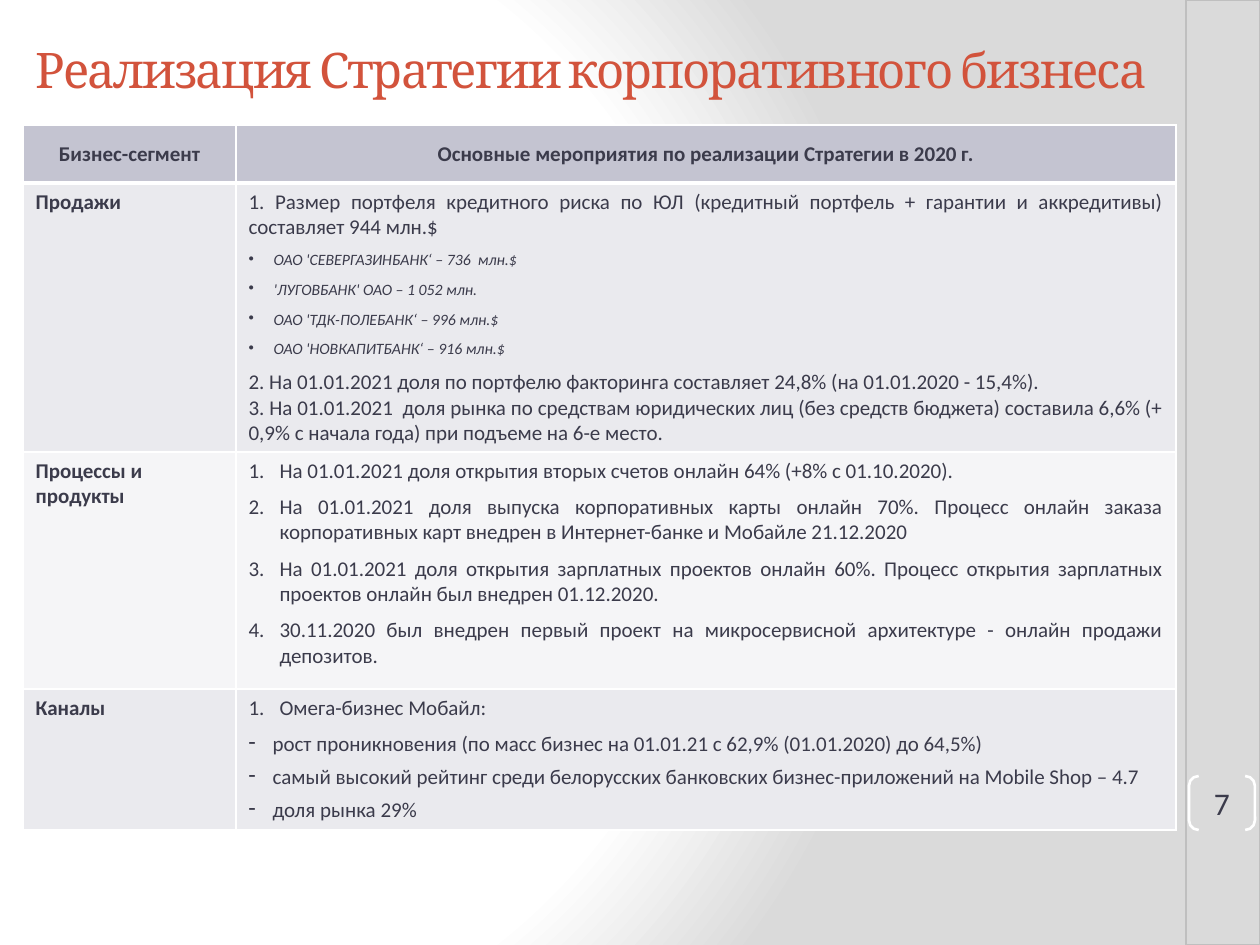
"""Build the slide on the corporate business strategy with its table of measures."""
from lxml import etree
from pptx import Presentation
from pptx.dml.color import RGBColor
from pptx.enum.shapes import MSO_SHAPE
from pptx.enum.text import MSO_ANCHOR, PP_ALIGN
from pptx.oxml import parse_xml
from pptx.oxml.ns import nsdecls, qn
from pptx.util import Pt

SCALE = 914400 / 126
WHITE = RGBColor(0xFF, 0xFF, 0xFF)
INK = RGBColor(0x3B, 0x3B, 0x4B)
RED = RGBColor(0xD2, 0x53, 0x3C)
GREY = RGBColor(0xBF, 0xBF, 0xBF)
HEADER = RGBColor(0xC4, 0xC4, 0xD1)
BAND_DARK = RGBColor(0xEA, 0xEA, 0xEE)
BAND_LIGHT = RGBColor(0xF5, 0xF5, 0xF7)

PLAIN = {}
BANK = {"bullet": ("buChar", "char", "•"), "indent": 25, "before": 6, "size": 9, "italic": True}
NUMBER = {"bullet": ("buAutoNum", "type", "arabicPeriod"), "indent": 31, "before": 6}
DASH = {"bullet": ("buChar", "char", "-"), "indent": 24, "before": 6}
TIGHT = {**DASH, "line": 13}

SEGMENTS = [
    ("Продажи", BAND_DARK, [
        ("1. Размер портфеля кредитного риска по ЮЛ (кредитный портфель + гарантии и аккредитивы) составляет 944 млн.$", PLAIN),
        ("ОАО 'СЕВЕРГАЗИНБАНК‘ – 736  млн.$", BANK),
        ("'ЛУГОВБАНК' ОАО – 1 052 млн.", BANK),
        ("ОАО 'ТДК-ПОЛЕБАНК‘ – 996 млн.$", BANK),
        ("ОАО 'НОВКАПИТБАНК‘ – 916 млн.$", {**BANK, "after": 6}),
        ("2. На 01.01.2021 доля по портфелю факторинга составляет 24,8% (на 01.01.2020 - 15,4%).", PLAIN),
        ("3. На 01.01.2021  доля рынка по средствам юридических лиц (без средств бюджета) составила 6,6% (+ 0,9% с начала года) при подъеме на 6-е место.", PLAIN),
    ]),
    ("Процессы и продукты", BAND_LIGHT, [
        ("На 01.01.2021 доля открытия вторых счетов онлайн 64% (+8% с 01.10.2020).", NUMBER),
        ("На 01.01.2021 доля выпуска корпоративных карты онлайн 70%. Процесс онлайн заказа корпоративных карт внедрен в Интернет-банке и Мобайле 21.12.2020", NUMBER),
        ("На 01.01.2021 доля открытия зарплатных проектов онлайн 60%. Процесс открытия зарплатных проектов онлайн был внедрен 01.12.2020.", NUMBER),
        ("30.11.2020 был внедрен первый проект на микросервисной архитектуре - онлайн продажи депозитов.", NUMBER),
    ]),
    ("Каналы", BAND_DARK, [
        ("Омега-бизнес Мобайл:", NUMBER),
        ("рост проникновения (по масс бизнес на 01.01.21 с 62,9% (01.01.2020) до 64,5%)", DASH),
        ("самый высокий рейтинг среди белорусских банковских бизнес-приложений на Mobile Shop – 4.7", TIGHT),
        ("доля рынка 29%", TIGHT),
    ]),
]


def px(*lengths):
    return [round(length * SCALE) for length in lengths]


def write(para, text, align, size=12, bold=False, italic=False, color=INK, name="Calibri",
          bullet=None, indent=0, before=0, after=0, line=None):
    para.text = text
    para.alignment = align
    para.space_before, para.space_after = Pt(before), Pt(after)
    if line:
        para.line_spacing = Pt(line)
    if bullet:
        kind, key, value = bullet
        props = para._p.get_or_add_pPr()
        hang, = px(indent)
        props.set("marL", str(hang))
        props.set("indent", str(-hang))
        etree.SubElement(props, qn(f"a:{kind}")).set(key, value)
    font = para.font
    font.name, font.size, font.bold, font.italic = name, Pt(size), bold, italic
    font.color.rgb = color


deck = Presentation()
deck.slide_width, deck.slide_height = px(1260, 945)
page = deck.slides.add_slide(deck.slide_layouts[6])
stops = "".join(f'<a:gs pos="{place * 1000}"><a:srgbClr val="{color}"/></a:gs>'
                for place, color in [(0, "FFFFFF"), (75, "FFFFFF"), (100, "DADADA")])
page._element.cSld.insert(0, parse_xml(
    f'<p:bg {nsdecls("p", "a")}><p:bgPr><a:gradFill rotWithShape="1"><a:gsLst>{stops}</a:gsLst>'
    '<a:path path="circle"><a:fillToRect l="20000" t="50000" r="100000" b="50000"/></a:path>'
    '</a:gradFill><a:effectLst/></p:bgPr></p:bg>'))

strip = page.shapes.add_shape(MSO_SHAPE.RECTANGLE, *px(1186, 0, 74, 945))
bracket = page.shapes.add_shape(MSO_SHAPE.DOUBLE_BRACKET, *px(1189, 776, 66, 54))
for shape, color, width in [(strip, GREY, 1), (bracket, WHITE, 1.5)]:
    shape.shadow.inherit = False
    shape.fill.background()
    shape.line.color.rgb = color
    shape.line.width = Pt(width)
bracket.adjustments[0] = 0.18
frame = bracket.text_frame
frame.margin_left = frame.margin_right = frame.margin_top = frame.margin_bottom = 0
frame.vertical_anchor = MSO_ANCHOR.MIDDLE
write(frame.paragraphs[0], "7", PP_ALIGN.CENTER, size=18)

title = page.shapes.add_textbox(*px(23, 27, 1153, 83)).text_frame
title.word_wrap = True
title.vertical_anchor = MSO_ANCHOR.MIDDLE
heading = title.paragraphs[0]
write(heading, "Реализация Стратегии корпоративного бизнеса", PP_ALIGN.LEFT,
      size=28, color=RED, name="Cambria")
heading._p.pPr.find(qn("a:defRPr")).set("spc", "-100")
heading.runs[0]._r.get_or_add_rPr().set("spc", "-100")

table = page.shapes.add_table(4, 2, *px(23, 125, 1153, 705)).table
table.first_row = table.horz_banding = False
for column, width in zip(table.columns, px(213, 940)):
    column.width = width
for row, height in zip(table.rows, px(58, 269, 237, 141)):
    row.height = height

titles = ["Бизнес-сегмент", "Основные мероприятия по реализации Стратегии в 2020 г."]
for cell, text in zip(table.rows[0].cells, titles):
    cell.vertical_anchor = MSO_ANCHOR.MIDDLE
    write(cell.text_frame.paragraphs[0], text, PP_ALIGN.CENTER, bold=True)
for row, (segment, color, measures) in zip(list(table.rows)[1:], SEGMENTS):
    label, body = row.cells
    write(label.text_frame.paragraphs[0], segment, PP_ALIGN.LEFT, bold=True)
    for index, (text, style) in enumerate(measures):
        para = body.text_frame.add_paragraph() if index else body.text_frame.paragraphs[0]
        first = {} if index else {"before": 0}
        write(para, text, PP_ALIGN.JUSTIFY, **{**style, **first})

fills = [HEADER] + [color for _, color, _ in SEGMENTS]
for number, (row, color) in enumerate(zip(table.rows, fills)):
    widths = {"L": 1, "R": 1, "T": 3 if number == 1 else 1, "B": 3 if number == 0 else 1}
    for cell in row.cells:
        cell.fill.solid()
        cell.fill.fore_color.rgb = color
        for place, (side, width) in enumerate(widths.items()):
            cell._tc.get_or_add_tcPr().insert(place, parse_xml(
                f'<a:ln{side} {nsdecls("a")} w="{Pt(width)}"><a:solidFill>'
                f'<a:srgbClr val="{WHITE}"/></a:solidFill></a:ln{side}>'))

deck.save("out.pptx")
